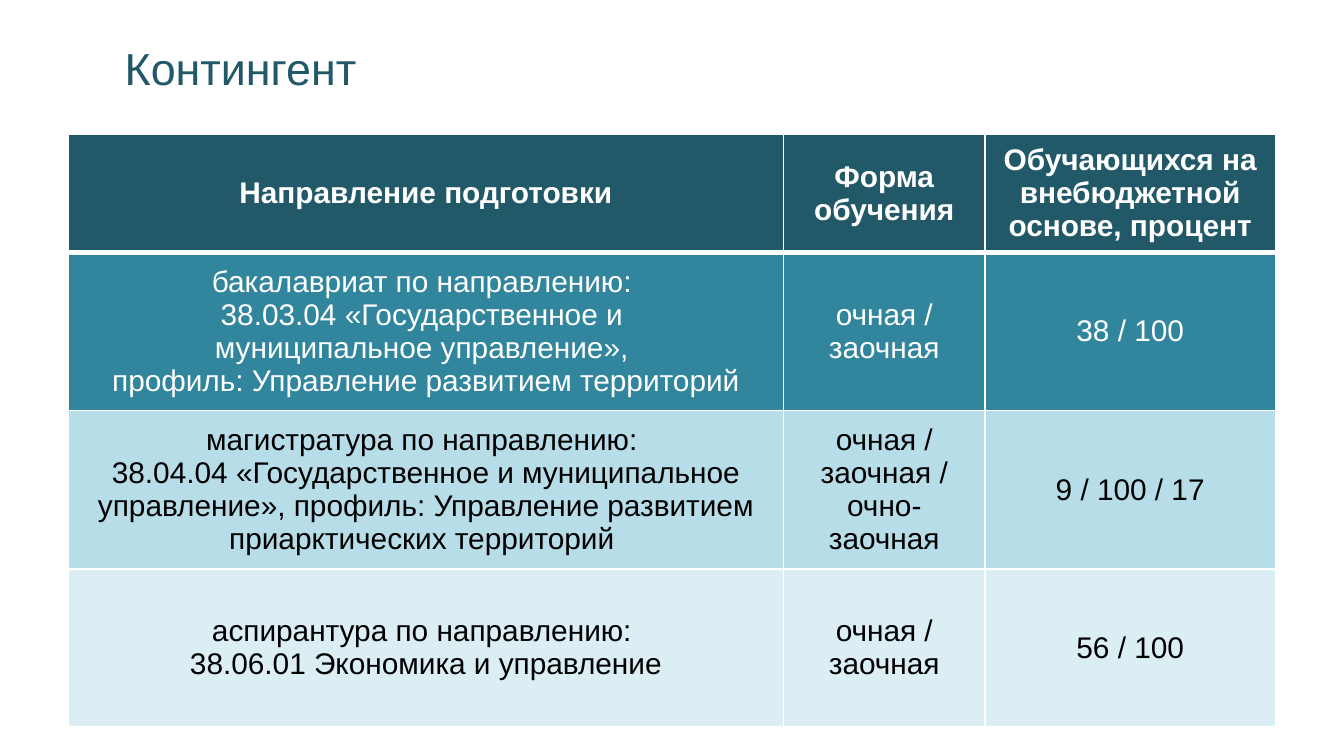
from lxml.etree import SubElement
from pptx import Presentation
from pptx.dml.color import RGBColor
from pptx.enum.text import MSO_ANCHOR, PP_ALIGN
from pptx.oxml.ns import qn
from pptx.util import Inches, Pt

WHITE = RGBColor(0xFF, 0xFF, 0xFF)
BLACK = RGBColor(0, 0, 0)
DARK = RGBColor(0x21, 0x59, 0x68)
TEAL = RGBColor(0x31, 0x85, 0x9C)
LIGHT = RGBColor(0xB7, 0xDE, 0xE8)
PALE = RGBColor(0xDB, 0xEE, 0xF4)

COLS = (5.32, 1.5, 2.16)
# Height, fill, text colour and cell texts of each row
ROWS = (
    (0.88, DARK, WHITE, (
        "Направление подготовки",
        "Форма обучения",
        "Обучающихся на внебюджетной основе, процент")),
    (1.18, TEAL, WHITE, (
        "бакалавриат по направлению: \v38.03.04 «Государственное и \v"
        "муниципальное управление», \vпрофиль: Управление развитием территорий",
        "очная / заочная",
        "38 / 100")),
    (1.18, LIGHT, BLACK, (
        "магистратура по направлению: \v38.04.04 «Государственное и муниципальное "
        "управление», профиль: Управление развитием приарктических территорий ",
        "очная / заочная / очно-заочная",
        "9 / 100 / 17")),
    (1.18, PALE, BLACK, (
        "аспирантура по направлению: \n38.06.01 Экономика и управление",
        "очная / заочная",
        "56 / 100")),
)


def set_font(par, size, color, bold=False):
    for run in par.runs:
        font = run.font
        font.name = "Arial"
        font.size = Pt(size)
        font.bold = bold
        font.color.rgb = color


def add_title(slide, left, top, width, height):
    box = slide.shapes.add_textbox(Inches(left), Inches(top), Inches(width), Inches(height))
    frame = box.text_frame
    frame.word_wrap = True
    frame.vertical_anchor = MSO_ANCHOR.MIDDLE
    frame.text = "Контингент"
    set_font(frame.paragraphs[0], 24, DARK)


def add_borders(cell, widths):
    """Draw white borders; widths are points for left, right, top, bottom."""
    props = cell._tc.get_or_add_tcPr()
    for side, width in zip("LRTB", widths):
        line = SubElement(props, qn(f"a:ln{side}"), w=str(Pt(width)))
        fill = SubElement(line, qn("a:solidFill"))
        SubElement(fill, qn("a:srgbClr"), val=str(WHITE))


def fill_cell(cell, text, fill, color, bold, widths):
    add_borders(cell, widths)
    cell.fill.solid()
    cell.fill.fore_color.rgb = fill
    cell.vertical_anchor = MSO_ANCHOR.MIDDLE
    cell.margin_left = cell.margin_right = Inches(0.07)
    cell.margin_top = cell.margin_bottom = 0
    cell.text_frame.text = text
    for par in cell.text_frame.paragraphs:
        par.alignment = PP_ALIGN.CENTER
        set_font(par, 16, color, bold)


def add_grid(slide, left, top, width, height):
    table = slide.shapes.add_table(
        len(ROWS), len(COLS), Inches(left), Inches(top), Inches(width), Inches(height)).table
    for col, size in zip(table.columns, COLS):
        col.width = Inches(size * width / sum(COLS))
    total = sum(row[0] for row in ROWS)
    for i, (size, fill, color, texts) in enumerate(ROWS):
        table.rows[i].height = Inches(size * height / total)
        widths = (1, 1, 3 if i == 1 else 1, 3 if i == 0 else 1)
        for j, text in enumerate(texts):
            fill_cell(table.cell(i, j), text, fill, color, i == 0, widths)


def main():
    deck = Presentation()
    deck.slide_width = Inches(10)
    deck.slide_height = Inches(10 * 9 / 16)
    slide = deck.slides.add_slide(deck.slide_layouts[6])
    add_title(slide, 0.83, 0.23, 8.67, 0.54)
    add_grid(slide, 0.51, 1, 8.98, 4.41)
    deck.save("out.pptx")


if __name__ == "__main__":
    main()
